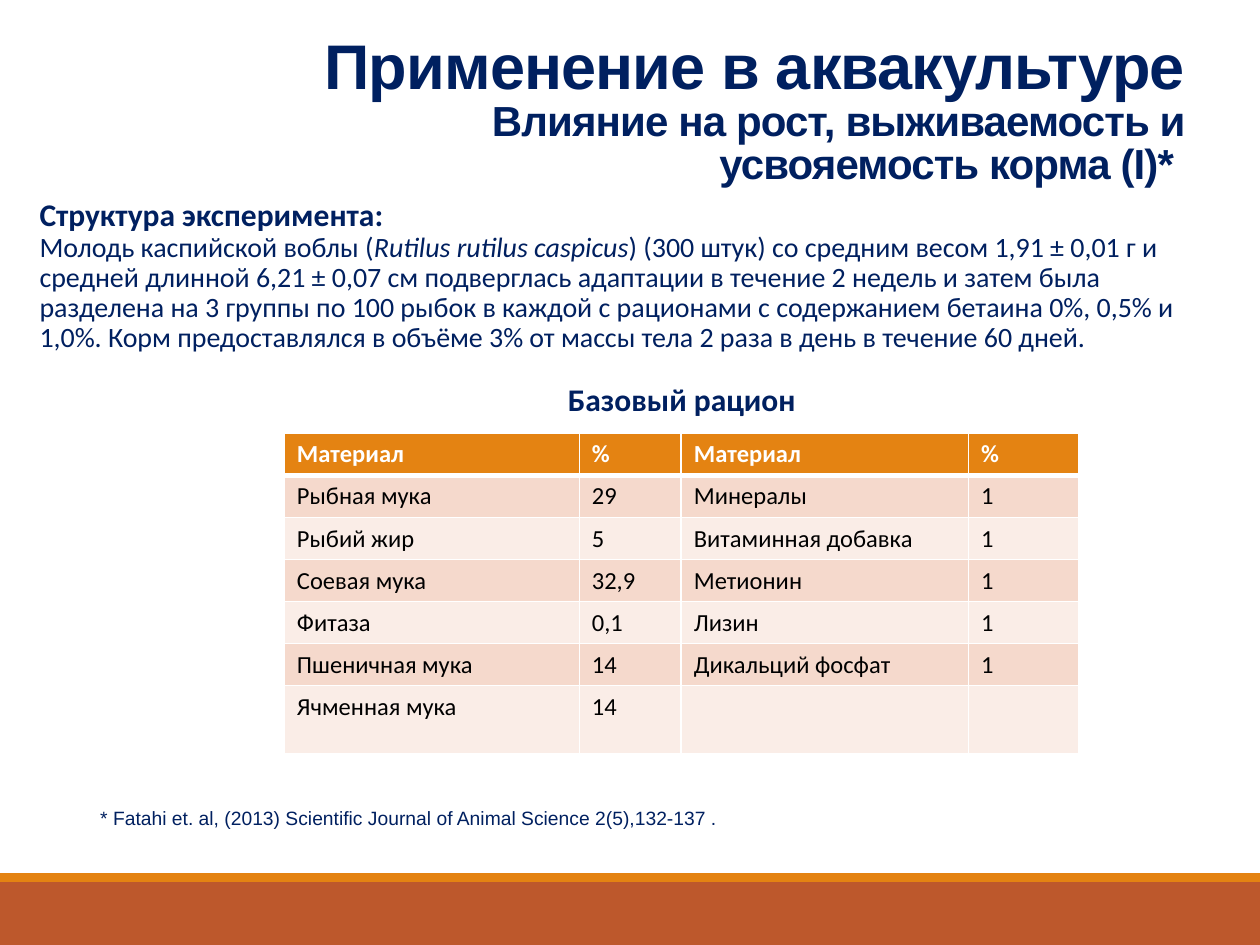
from dataclasses import dataclass
from typing import NamedTuple

from lxml import etree
from pptx import Presentation
from pptx.dml.color import RGBColor
from pptx.enum.shapes import MSO_SHAPE
from pptx.enum.text import MSO_ANCHOR, PP_ALIGN
from pptx.oxml.ns import qn
from pptx.util import Pt

RECTANGLE = MSO_SHAPE.RECTANGLE
LEFT, RIGHT = PP_ALIGN.LEFT, PP_ALIGN.RIGHT
TOP, BOTTOM = MSO_ANCHOR.TOP, MSO_ANCHOR.BOTTOM


@dataclass(frozen=True)
class Theme:
    navy: str = "002060"
    white: str = "FFFFFF"
    black: str = "000000"
    rust: str = "BD582C"
    orange: str = "E48312"
    bands: tuple[str, str] = ("F5D9CC", "FAEDE7")
    heading_font: str = "Arial"
    body_font: str = "Calibri"
    title_size: float = 36
    subtitle_size: float = 24
    label_size: float = 18
    body_size: float = 16
    table_size: float = 14
    source_size: float = 11


THEME = Theme()


class Box(NamedTuple):
    left: float
    top: float
    width: float
    height: float

    def lengths(self) -> list[Pt]:
        return [Pt(value) for value in self]


class Piece(NamedTuple):
    text: str
    size: float | None = None
    italic: bool = False
    spacing: int = 0
    break_after: bool = False


@dataclass(frozen=True)
class Line:
    pieces: tuple[Piece, ...]
    size: float
    font: str = THEME.body_font
    color: str = THEME.navy
    bold: bool = False
    align: PP_ALIGN = LEFT
    line_spacing: float = 1.0


def write_line(paragraph, line: Line) -> None:
    paragraph.alignment = line.align
    paragraph.line_spacing = line.line_spacing
    font = paragraph.font
    font.name, font.size, font.bold = line.font, Pt(line.size), line.bold
    font.color.rgb = RGBColor.from_string(line.color)
    for piece in line.pieces:
        run = paragraph.add_run()
        run.text = piece.text
        if piece.size:
            run.font.size = Pt(piece.size)
        if piece.italic:
            run.font.italic = True
        if piece.spacing:
            run._r.get_or_add_rPr().set("spc", str(piece.spacing))
        if piece.break_after:
            paragraph.add_line_break()


def add_text(slide, box: Box, lines: list[Line], anchor=TOP) -> None:
    frame = slide.shapes.add_textbox(*box.lengths()).text_frame
    frame.word_wrap = True
    frame.vertical_anchor = anchor
    for index, line in enumerate(lines):
        paragraph = frame.add_paragraph() if index else frame.paragraphs[0]
        write_line(paragraph, line)


def add_bar(slide, box: Box, color: str) -> None:
    bar = slide.shapes.add_shape(RECTANGLE, *box.lengths())
    bar.shadow.inherit = False
    bar.fill.solid()
    bar.fill.fore_color.rgb = RGBColor.from_string(color)
    bar.line.fill.background()


def add_borders(cell, bottom_width: float) -> None:
    properties = cell._tc.get_or_add_tcPr()
    for side in "LRTB":
        width = Pt(bottom_width if side == "B" else 1)
        border = etree.SubElement(properties, qn(f"a:ln{side}"), w=str(width))
        fill = etree.SubElement(border, qn("a:solidFill"))
        etree.SubElement(fill, qn("a:srgbClr"), val=THEME.white)


def add_diet_table(slide, box: Box, widths: list[float], heights: list[float],
                   rows: list[tuple[str, ...]]) -> None:
    table = slide.shapes.add_table(len(rows), len(widths), *box.lengths()).table
    for column, width in zip(table.columns, widths):
        column.width = Pt(width)
    for index, (row, height, texts) in enumerate(zip(table.rows, heights, rows)):
        row.height = Pt(height)
        header = index == 0
        fill = THEME.orange if header else THEME.bands[(index - 1) % 2]
        color = THEME.white if header else THEME.black
        for cell, text in zip(row.cells, texts):
            add_borders(cell, 3 if header else 1)
            cell.fill.solid()
            cell.fill.fore_color.rgb = RGBColor.from_string(fill)
            if text:
                write_line(cell.text_frame.paragraphs[0],
                           Line((Piece(text),), THEME.table_size, color=color, bold=header))


TITLE = Line(
    (Piece("Применение в аквакультуре", spacing=-50, break_after=True),
     Piece("Влияние на рост, выживаемость и усвояемость корма (I)* ",
           THEME.subtitle_size, spacing=-50)),
    THEME.title_size, THEME.heading_font, bold=True, align=RIGHT, line_spacing=0.85)

EXPERIMENT = [
    Line((Piece("Структура эксперимента:"),), THEME.label_size, bold=True, line_spacing=0.9),
    Line((Piece("Молодь каспийской воблы ("),
          Piece("Rutilus rutilus caspicus", italic=True),
          Piece(") (300 штук) со средним весом 1,91 ± 0,01 г и средней длинной "
                "6,21 ± 0,07 см подверглась адаптации в течение 2 недель и затем была "
                "разделена на 3 группы по 100 рыбок в каждой с рационами с содержанием "
                "бетаина 0%, 0,5% и 1,0%. Корм предоставлялся в объёме 3% от массы тела "
                "2 раза в день в течение 60 дней.")),
         THEME.body_size, line_spacing=0.9),
]

DIET_LABEL = Line((Piece("Базовый рацион"),), THEME.label_size, bold=True)
SOURCE = Line(
    (Piece("* Fatahi et. al, (2013) Scientific Journal of Animal Science 2(5),132-137 ."),),
    THEME.source_size, THEME.heading_font)

DIET = [
    ("Материал", "%", "Материал", "%"),
    ("Рыбная мука", "29", "Минералы", "1"),
    ("Рыбий жир", "5", "Витаминная добавка", "1"),
    ("Соевая мука", "32,9", "Метионин", "1"),
    ("Фитаза", "0,1", "Лизин", "1"),
    ("Пшеничная мука", "14", "Дикальций фосфат", "1"),
    ("Ячменная мука", "14", "", ""),
]
DIET_WIDTHS = [168.5, 58.3, 164.2, 63]
DIET_HEIGHTS = [24] * 6 + [39]


def main() -> None:
    presentation = Presentation()
    presentation.slide_width, presentation.slide_height = Pt(720), Pt(540)
    slide = presentation.slides.add_slide(presentation.slide_layouts[6])

    # Footer bands
    add_bar(slide, Box(0, 504, 720, 36), THEME.rust)
    add_bar(slide, Box(0, 499, 720, 5), THEME.orange)

    # Title and experiment description
    add_text(slide, Box(150, 10.8, 534, 100), [TITLE], BOTTOM)
    add_text(slide, Box(15.5, 110.2, 671, 96.5), EXPERIMENT)

    # Source reference
    add_text(slide, Box(50.2, 457.2, 476, 20.9), [SOURCE])

    # Basic diet
    add_text(slide, Box(317.5, 213.8, 155, 28.8), [DIET_LABEL])
    add_diet_table(slide, Box(162.5, 247.6, sum(DIET_WIDTHS), sum(DIET_HEIGHTS)),
                   DIET_WIDTHS, DIET_HEIGHTS, DIET)

    presentation.save("out.pptx")


if __name__ == "__main__":
    main()
